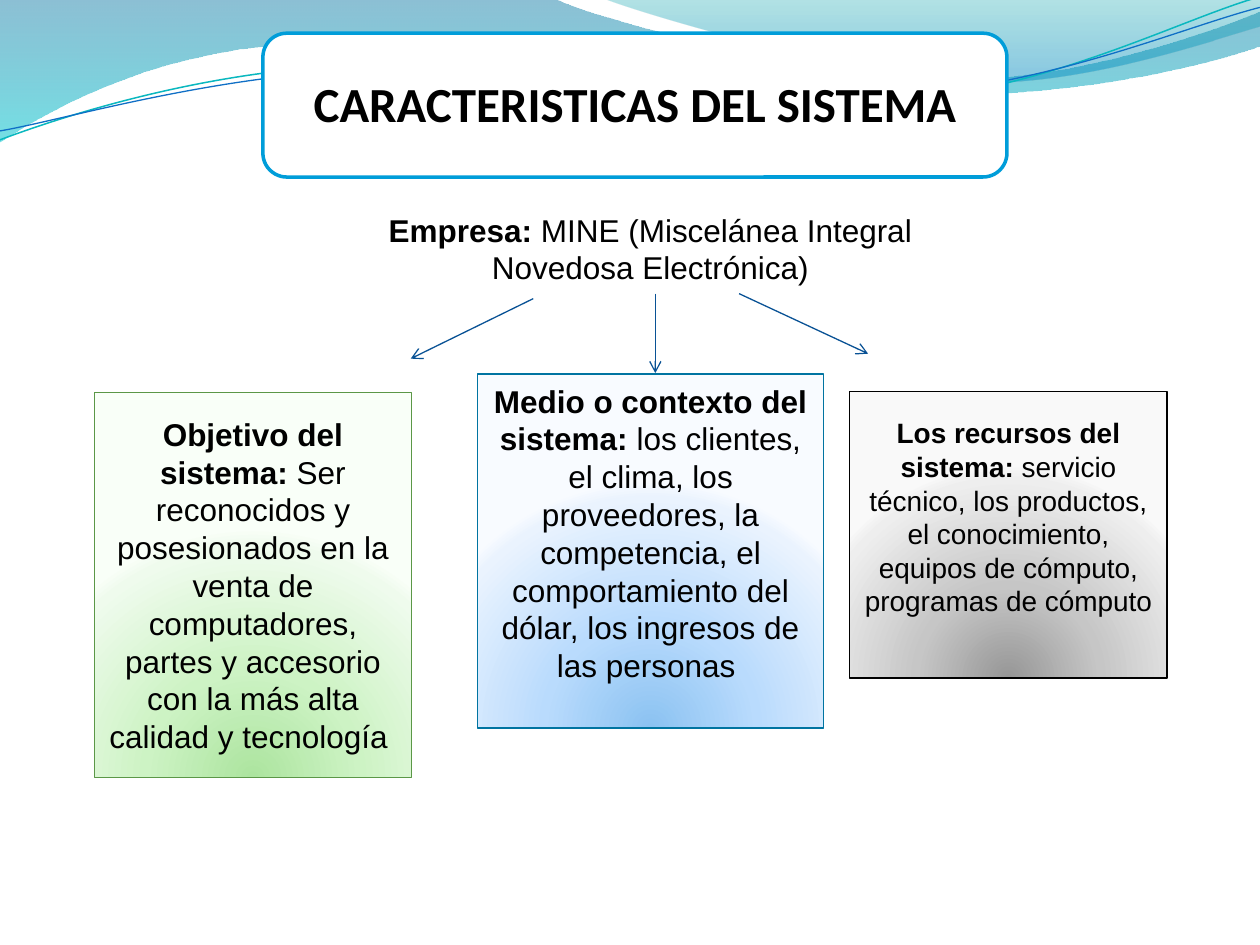
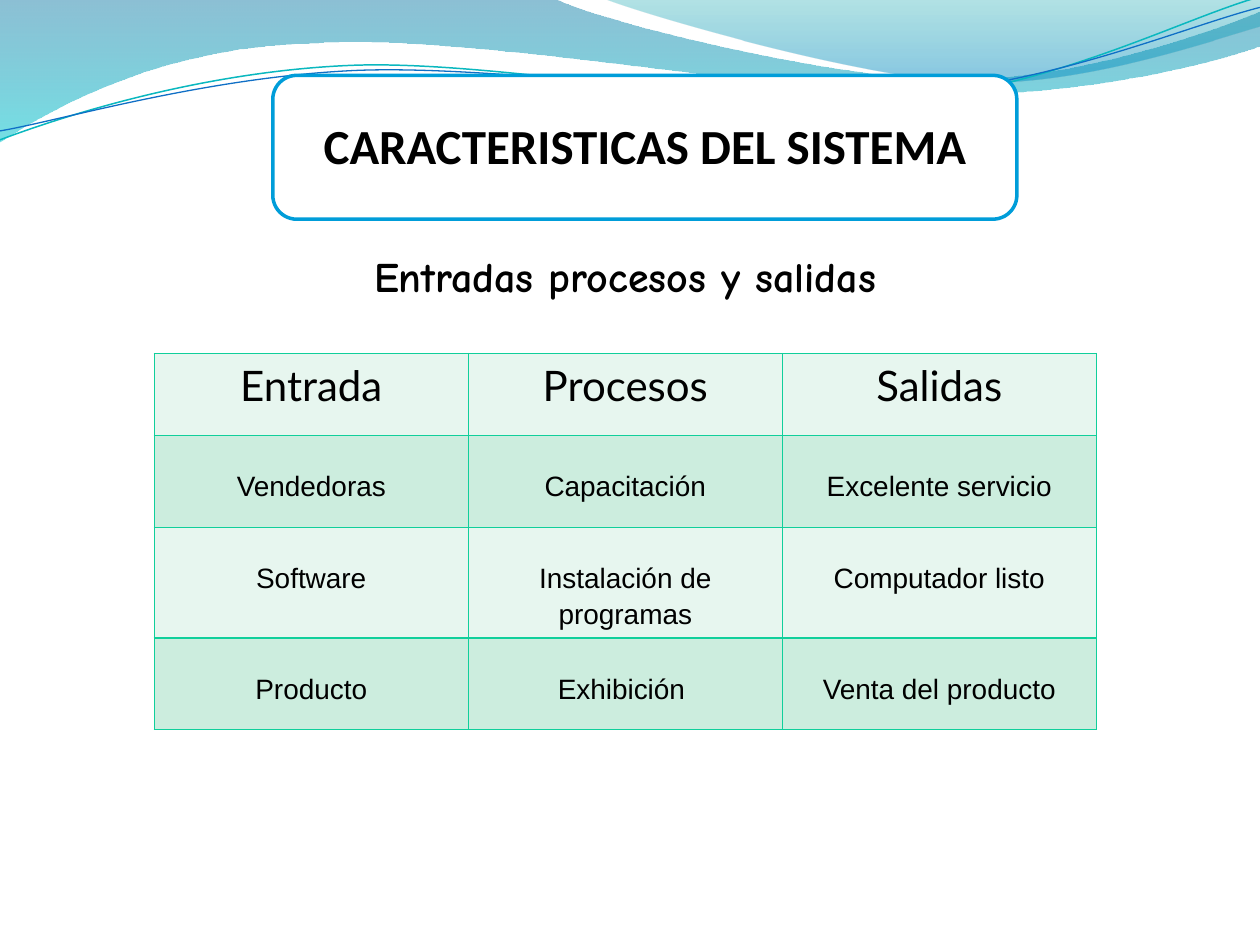
from typing import NamedTuple

import pptx
import pptx.dml.color
import pptx.enum.shapes
import pptx.enum.text
import pptx.oxml
import pptx.oxml.ns
import pptx.util

Cm = pptx.util.Cm
Pt = pptx.util.Pt
RGBColor = pptx.dml.color.RGBColor
MSO_SHAPE = pptx.enum.shapes.MSO_SHAPE
CENTER = pptx.enum.text.PP_ALIGN.CENTER
MIDDLE = pptx.enum.text.MSO_ANCHOR.MIDDLE
qn = pptx.oxml.ns.qn
NS = pptx.oxml.ns.nsdecls("a")

BLACK = RGBColor(0x00, 0x00, 0x00)
WHITE = RGBColor(0xFF, 0xFF, 0xFF)
DEEP_BLUE = RGBColor(0x00, 0x74, 0xA1)
CYAN = RGBColor(0x00, 0xC6, 0xCF)
TEAL = RGBColor(0x00, 0xA1, 0xA9)
SKY = RGBColor(0x00, 0x8B, 0xBF)
LINE_TEAL = RGBColor(0x0A, 0xB8, 0xBF)
LINE_BLUE = RGBColor(0x0F, 0x6F, 0xC6)
TITLE_BORDER = RGBColor(0x00, 0x9D, 0xD9)
ARROW_BLUE = RGBColor(0x09, 0x52, 0x95)
CARD_GREEN = RGBColor(0x5B, 0x97, 0x47)
TABLE_BORDER = RGBColor(0x10, 0xCF, 0x9B)
ROW_COLORS = (RGBColor(0xE7, 0xF6, 0xEF), RGBColor(0xCC, 0xED, 0xDE))
GREENS = tuple(map(RGBColor.from_string, ("ACE49F", "CDF3C4", "EFFBED", "F9FFF8")))
BLUES = tuple(map(RGBColor.from_string, ("8BC2F1", "B9DBFD", "EAF3FE", "F8FBFF")))
GREYS = tuple(map(RGBColor.from_string, ("979797", "C6C6C6", "EEEEEE", "F9F9F9")))

TITLE = "CARACTERISTICAS DEL SISTEMA"
LINE_HEIGHT = 0.73  # one line of body text, in cm
SHADE_DOWN = '<a:lin ang="5400000" scaled="0"/>'
SHADE_FROM_BOTTOM = ('<a:path path="circle"><a:fillToRect l="50000" t="130000" '
                     'r="50000" b="-30000"/></a:path>')

Point = tuple[float, float]
Paragraph = tuple[tuple[str, bool], ...]


class Stop(NamedTuple):
    percent: int
    color: RGBColor
    opacity: int = 100


class Wave(NamedTuple):
    """Start point, then pieces: one point is a straight line, three are a curve."""
    start: Point
    pieces: tuple[tuple[Point, ...], ...]
    stops: tuple[Stop, ...] = ()
    line: RGBColor | None = None
    weight: float = 0


class Card(NamedTuple):
    left: float
    top: float
    width: float
    height: float
    shades: tuple[RGBColor, ...]
    border: RGBColor
    size: int
    paragraphs: tuple[Paragraph, ...]
    lines_below: int = 0


class Arrow(NamedTuple):
    start: Point
    end: Point


WAVES = (
    Wave((0, 0), (
        ((11.18, -0.03),),
        ((12.09, 0.43), (16.87, 1.6), (19.25, 1.6)),
        ((21.67, 1.6), (24.33, 0.66), (25.4, 0.23)),
        ((25.43, 0.91),),
        ((24.97, 1.12), (22.1, 1.93), (18.95, 1.91)),
        ((15.8, 1.91), (9.7, 0.71), (6.53, 0.86)),
        ((3.28, 0.91), (1.17, 2.11), (-0.03, 2.87)),
        ((0, 0),),
    ), stops=(Stop(0, DEEP_BLUE, 45), Stop(100, CYAN, 55))),
    Wave((12.17, -0.03), (
        ((12.93, 0.28), (17.32, 1.57), (19.53, 1.65)),
        ((21.74, 1.75), (24.41, 0.81), (25.4, 0.53)),
        ((25.4, 0),),
        ((12.17, -0.03),),
    ), stops=(Stop(0, TEAL, 30), Stop(80, SKY, 45))),
    Wave((0, 2.82), (
        ((1.22, 2.36), (4.01, 1.45), (7.04, 1.32)),
        ((10.03, 1.19), (15.06, 2.26), (18.11, 2.03)),
        ((21.16, 1.8), (23.83, 0.38), (25.35, -0.05)),
    ), line=LINE_TEAL, weight=0.85),
    Wave((0, 2.64), (
        ((1.19, 2.44), (4.17, 1.55), (7.19, 1.42)),
        ((10.24, 1.3), (15.16, 2.13), (18.21, 1.91)),
        ((21.23, 1.7), (23.9, 0.53), (25.4, 0.15)),
    ), line=LINE_BLUE, weight=0.75),
)

CARDS = (
    Card(1.9, 7.92, 6.4, 7.75, GREENS, CARD_GREEN, 18, (
        (("Objetivo del sistema: ", True),
         ("Ser reconocidos y posesionados en la venta de computadores, "
          "partes y accesorio", False)),
        (("con la más alta calidad y tecnología ", False),),
    )),
    Card(9.63, 7.54, 6.97, 7.14, BLUES, DEEP_BLUE, 18, (
        (("Medio o contexto del sistema:", True),
         (" los clientes, el clima, los proveedores, la competencia, el comportamiento "
          "del dólar, los ingresos de las personas ", False)),
    ), lines_below=1),
    Card(17.13, 7.9, 6.4, 5.77, GREYS, BLACK, 16, (
        (("Los recursos del sistema:", True),
         (" servicio técnico, los productos, el conocimiento, equipos de cómputo, "
          "programas de cómputo ", False)),
    ), lines_below=1),
)

ARROWS = (
    Arrow((14.9, 5.92), (17.5, 7.13)),
    Arrow((13.21, 5.92), (13.21, 7.52)),
    Arrow((10.75, 6.02), (8.28, 7.23)),
)

FLOW_ROWS = (
    ("Entrada", "Procesos", "Salidas"),
    ("Vendedoras", "Capacitación", "Excelente servicio"),
    ("Software", "Instalación de programas", "Computador listo"),
    ("Producto", "Exhibición ", "Venta del producto"),
)
ROW_HEIGHTS = (1.65, 1.85, 2.23, 1.85)
COLUMN_WIDTH = 6.33


def solid_xml(color: RGBColor) -> str:
    return f'<a:solidFill><a:srgbClr val="{color}"/></a:solidFill>'


def set_gradient(s, stops: tuple[Stop, ...], shade: str) -> None:
    s.fill.gradient()
    old = s.element.spPr.find(qn("a:gradFill"))
    stops_xml = "".join(
        f'<a:gs pos="{stop.percent * 1000}"><a:srgbClr val="{stop.color}">'
        f'<a:alpha val="{stop.opacity * 1000}"/></a:srgbClr></a:gs>' for stop in stops)
    new = pptx.oxml.parse_xml(
        f'<a:gradFill {NS} rotWithShape="1"><a:gsLst>{stops_xml}</a:gsLst>{shade}</a:gradFill>')
    old.getparent().replace(old, new)


def set_line(s, color: RGBColor, weight: float) -> None:
    s.line.color.rgb = color
    s.line.width = Pt(weight)


def format_text(tf, font: str, size: int, bold: bool | None = None) -> None:
    for p in tf.paragraphs:
        p.alignment = CENTER
        for r in p.runs:
            r.font.name, r.font.size = font, Pt(size)
            r.font.color.rgb = BLACK
            if bold is not None:
                r.font.bold = bold


def write_mixed(tf, paragraphs: tuple[Paragraph, ...], size: int) -> None:
    """Write paragraphs whose runs differ in weight."""
    tf.word_wrap = True
    for i, runs in enumerate(paragraphs):
        p = tf.add_paragraph() if i else tf.paragraphs[0]
        for text, bold in runs:
            r = p.add_run()
            r.text, r.font.bold = text, bold
    format_text(tf, "Arial", size)


def bend_segments(s, pieces: tuple[tuple[Point, ...], ...]) -> None:
    """Turn each three-point piece of the outline into one Bézier curve."""
    segments = iter(s.element.spPr.findall(f".//{qn('a:lnTo')}"))
    for piece in pieces:
        group = [next(segments) for _ in piece]
        if len(group) == 1:
            continue
        curve = pptx.oxml.parse_xml(f"<a:cubicBezTo {NS}/>")
        group[0].addprevious(curve)
        for segment in group:
            curve.append(segment[0])
            segment.getparent().remove(segment)


def add_wave(slide, wave: Wave):
    points = [(Cm(x), Cm(y)) for piece in wave.pieces for x, y in piece]
    builder = slide.shapes.build_freeform(*map(Cm, wave.start))
    builder.add_line_segments(points, close=bool(wave.stops))
    s = builder.convert_to_shape()
    bend_segments(s, wave.pieces)
    s.shadow.inherit = False
    if wave.stops:
        set_gradient(s, wave.stops, SHADE_DOWN)
        s.line.fill.background()
    else:
        s.fill.background()
        set_line(s, wave.line, wave.weight)
    return s


def move_waves_to_master(prs, slide) -> None:
    """Build the band on a slide, then hand it to the master for all slides."""
    tree = prs.slide_master.shapes.element
    for i, wave in enumerate(WAVES):
        tree.insert(2 + i, add_wave(slide, wave).element)


def add_title(slide, left: float, top: float) -> None:
    box = (Cm(left), Cm(top), Cm(15), Cm(2.9))
    frame = slide.shapes.add_shape(MSO_SHAPE.ROUNDED_RECTANGLE, *box)
    frame.shadow.inherit = False
    frame.fill.solid()
    frame.fill.fore_color.rgb = WHITE
    set_line(frame, TITLE_BORDER, 2)

    title = slide.shapes.title
    title.left, title.top, title.width, title.height = box
    title.text_frame.text = TITLE
    title.text_frame.vertical_anchor = MIDDLE
    title.text_frame.margin_bottom = Cm(0.21)
    format_text(title.text_frame, "Calibri", 28, True)
    slide.shapes.element.append(title.element)  # in front of its frame


def add_card(slide, card: Card) -> None:
    s = slide.shapes.add_shape(MSO_SHAPE.RECTANGLE, Cm(card.left), Cm(card.top),
                               Cm(card.width), Cm(card.height))
    s.shadow.inherit = False
    set_gradient(s, tuple(map(Stop, (0, 43, 93, 100), card.shades)), SHADE_FROM_BOTTOM)
    set_line(s, card.border, 0.75)
    tf = s.text_frame
    tf.vertical_anchor = MIDDLE
    tf.margin_bottom = Cm(0.13 + card.lines_below * LINE_HEIGHT)
    write_mixed(tf, card.paragraphs, card.size)


def add_arrow(slide, arrow: Arrow) -> None:
    s = slide.shapes.add_connector(pptx.enum.shapes.MSO_CONNECTOR.STRAIGHT,
                                   *map(Cm, (*arrow.start, *arrow.end)))
    set_line(s, ARROW_BLUE, 0.75)
    line = s.element.spPr.find(qn("a:ln"))
    line.append(pptx.oxml.parse_xml(f'<a:tailEnd {NS} type="arrow"/>'))
    s.element.spPr.append(pptx.oxml.parse_xml(f"<a:effectLst {NS}/>"))


def add_borders(cell) -> None:
    props = cell._tc.get_or_add_tcPr()
    for i, side in enumerate(("lnL", "lnR", "lnT", "lnB")):
        props.insert(i, pptx.oxml.parse_xml(
            f'<a:{side} {NS} w="{Pt(1)}">{solid_xml(TABLE_BORDER)}</a:{side}>'))


def add_flow_table(slide) -> None:
    columns = len(FLOW_ROWS[0])
    table = slide.shapes.add_table(len(FLOW_ROWS), columns, Cm(3.11), Cm(7.13),
                                   Cm(COLUMN_WIDTH * columns), Cm(sum(ROW_HEIGHTS))).table
    for column in table.columns:
        column.width = Cm(COLUMN_WIDTH)
    for i, (texts, height) in enumerate(zip(FLOW_ROWS, ROW_HEIGHTS)):
        table.rows[i].height = Cm(height)
        for j, text in enumerate(texts):
            cell = table.cell(i, j)
            cell.text_frame.text = text
            cell.fill.solid()
            cell.fill.fore_color.rgb = ROW_COLORS[i % 2]
            add_borders(cell)
            if i == 0:
                format_text(cell.text_frame, "Lato", 24, False)
                continue
            format_text(cell.text_frame, "Arial", 16, False)
            cell.text_frame.paragraphs[0].line_spacing = 1.15
            cell.margin_left = cell.margin_right = Cm(0.18)
            cell.margin_top, cell.margin_bottom = Cm(0.63), 0


def build_features_slide(slide) -> None:
    add_title(slide, 5.3, 0.67)
    company = slide.shapes.add_textbox(Cm(6.76), Cm(4.12), Cm(12.7), Cm(1.8))
    write_mixed(company.text_frame, (
        (("Empresa: ", True), ("MINE (Miscelánea Integral Novedosa Electrónica)", False)),
    ), 18)
    for card in CARDS:
        add_card(slide, card)
    for arrow in ARROWS:
        add_arrow(slide, arrow)


def build_flow_slide(slide) -> None:
    add_title(slide, 5.5, 1.52)
    subtitle = slide.shapes.add_textbox(Cm(5.5), Cm(4.93), Cm(14.2), Cm(1.27))
    subtitle.text_frame.word_wrap = True
    subtitle.text_frame.text = "Entradas procesos y salidas"
    format_text(subtitle.text_frame, "Comic Neue", 24, True)
    add_flow_table(slide)


def main() -> None:
    prs = pptx.Presentation()
    prs.slide_width, prs.slide_height = Cm(25.4), Cm(19.05)
    title_only = prs.slide_layouts[5]
    features, flow = (prs.slides.add_slide(title_only) for _ in range(2))
    move_waves_to_master(prs, features)
    build_features_slide(features)
    build_flow_slide(flow)
    prs.save("out.pptx")


if __name__ == "__main__":
    main()
